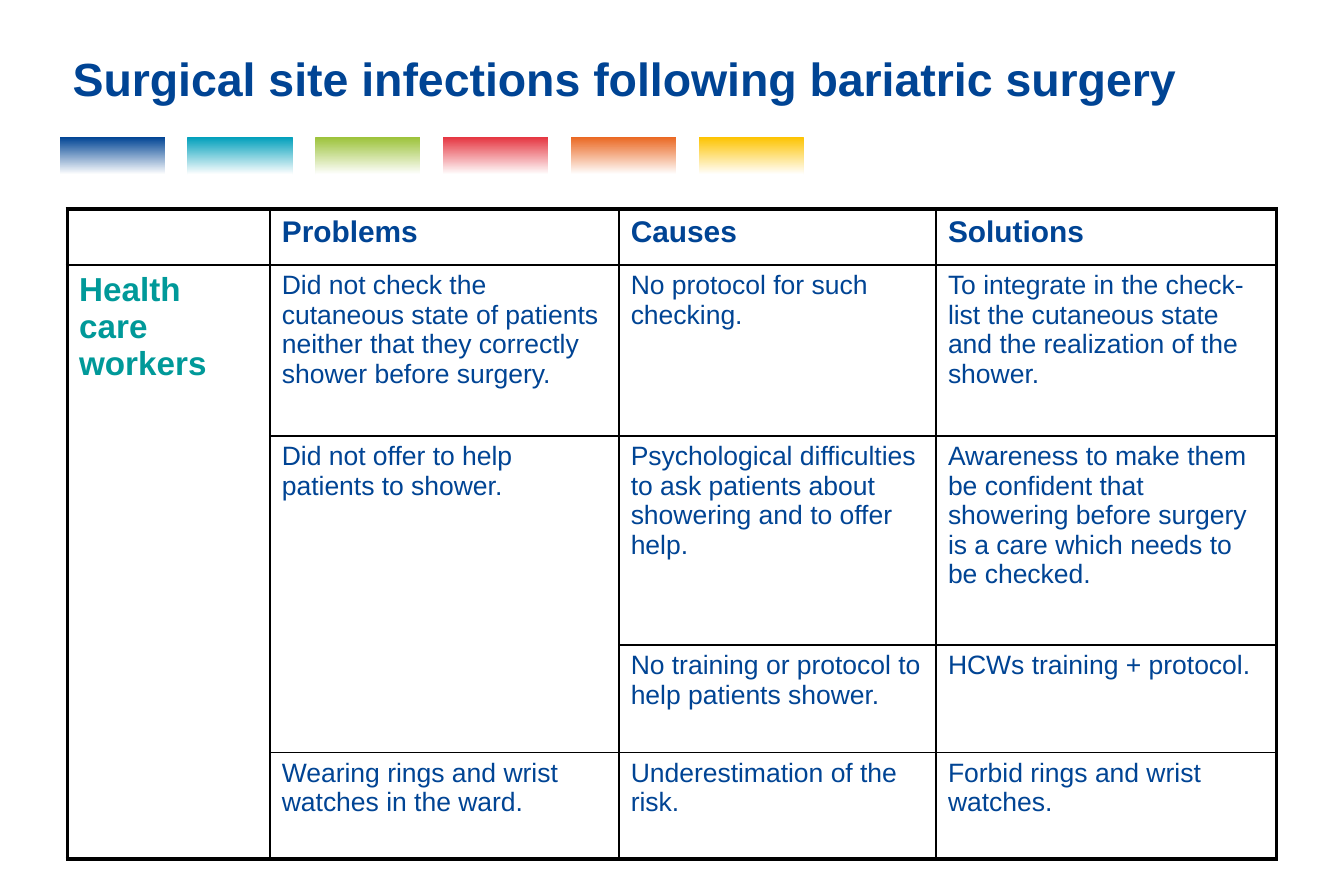
from dataclasses import dataclass

import pptx
import pptx.dml.color
import pptx.enum.shapes
import pptx.enum.text
import pptx.oxml
import pptx.oxml.ns
import pptx.slide
import pptx.table
import pptx.text.text
import pptx.util

RGBColor = pptx.dml.color.RGBColor
Pt = pptx.util.Pt

NAVY = RGBColor(0x00, 0x44, 0x94)
CYAN = RGBColor(0x00, 0x9F, 0xBB)
GREEN = RGBColor(0x9C, 0xC2, 0x39)
RED = RGBColor(0xE5, 0x35, 0x40)
ORANGE = RGBColor(0xEA, 0x67, 0x21)
YELLOW = RGBColor(0xFD, 0xC3, 0x00)
TEAL = RGBColor(0x00, 0x99, 0x99)
WHITE = RGBColor(0xFF, 0xFF, 0xFF)
BLACK = RGBColor(0x00, 0x00, 0x00)

FONT = "Arial"
OUTER_BORDER = 2.25
INNER_BORDER = 1
SWATCH_PITCH = 77
COLUMN_WIDTHS = [122.2, 210.3, 191.2, 205]
ROW_HEIGHTS = [33.8, 103, 126, 64.8, 64.1]


@dataclass(frozen=True)
class TextStyle:
    size: float
    color: RGBColor
    bold: bool


@dataclass(frozen=True)
class Entry:
    row: int
    column: int
    text: str
    style: TextStyle
    row_span: int = 1


TITLE = TextStyle(28, NAVY, True)
HEADING = TextStyle(18, NAVY, True)
GROUP = TextStyle(20, TEAL, True)
BODY = TextStyle(16, NAVY, False)

ENTRIES = [
    Entry(0, 1, "Problems", HEADING),
    Entry(0, 2, "Causes", HEADING),
    Entry(0, 3, "Solutions", HEADING),
    Entry(1, 0, "Health care workers", GROUP, 4),
    Entry(1, 1, "Did not check the cutaneous state of patients neither that "
                "they correctly shower before surgery.", BODY),
    Entry(1, 2, "No protocol for such checking.", BODY),
    Entry(1, 3, "To integrate in the check-list the cutaneous state and the "
                "realization of the shower.", BODY),
    Entry(2, 1, "Did not offer to help patients to shower.", BODY, 2),
    Entry(2, 2, "Psychological difficulties to ask patients about showering "
                "and to offer help.", BODY),
    Entry(2, 3, "Awareness to make them be confident that showering before "
                "surgery is a care which needs to be checked.", BODY),
    Entry(3, 2, "No training or protocol to help patients shower.", BODY),
    Entry(3, 3, "HCWs training + protocol.", BODY),
    Entry(4, 1, "Wearing rings and wrist watches in the ward.", BODY),
    Entry(4, 2, "Underestimation of the risk.", BODY),
    Entry(4, 3, "Forbid rings and wrist watches.", BODY),
]


def write(frame: pptx.text.text.TextFrame, text: str, style: TextStyle) -> None:
    frame.text = text
    font = frame.paragraphs[0].runs[0].font
    font.name = FONT
    font.size = Pt(style.size)
    font.bold = style.bold
    font.color.rgb = style.color


def add_swatch(slide: pptx.slide.Slide, position: int, color: RGBColor) -> None:
    swatch = slide.shapes.add_shape(
        pptx.enum.shapes.MSO_SHAPE.RECTANGLE,
        Pt(36 + position * SWATCH_PITCH), Pt(82.6), Pt(63.4), Pt(22.6))
    swatch.shadow.inherit = False
    swatch.line.fill.background()
    swatch.fill.gradient()
    swatch.fill.gradient_angle = 270
    for stop, shade in zip(swatch.fill.gradient_stops, (color, WHITE)):
        stop.color.rgb = shade
    for stop, offset in zip(swatch.fill.gradient_stops, (0, 1)):
        stop.position = offset


def add_title(slide: pptx.slide.Slide) -> None:
    title = slide.shapes.add_textbox(Pt(36.7), Pt(16.6), Pt(736.6), Pt(61.2))
    title.text_frame.word_wrap = True
    title.text_frame.vertical_anchor = pptx.enum.text.MSO_ANCHOR.MIDDLE
    write(title.text_frame, "Surgical site infections following bariatric surgery", TITLE)


def border_widths(cell: pptx.table._Cell, row: int, column: int) -> dict[str, float]:
    def width(is_outer: bool) -> float:
        return OUTER_BORDER if is_outer else INNER_BORDER

    last_row = len(ROW_HEIGHTS) - 1
    end_row = row + cell.span_height - 1 if cell.is_merge_origin else row
    inside_span = cell.is_spanned and row < last_row
    return {
        "lnL": width(column == 0),
        "lnR": width(column == len(COLUMN_WIDTHS) - 1),
        "lnT": 0 if cell.is_spanned else width(row == 0),
        "lnB": 0 if inside_span else width(end_row == last_row),
    }


def draw_borders(cell: pptx.table._Cell, widths: dict[str, float]) -> None:
    properties = cell._tc.get_or_add_tcPr()
    for index, (side, width) in enumerate(widths.items()):
        paint = (f'<a:solidFill><a:srgbClr val="{BLACK}"/></a:solidFill>'
                 if width else "<a:noFill/>")
        properties.insert(index, pptx.oxml.parse_xml(
            f'<a:{side} {pptx.oxml.ns.nsdecls("a")} w="{int(Pt(width))}">{paint}</a:{side}>'))


def add_findings(slide: pptx.slide.Slide) -> None:
    findings = slide.shapes.add_table(
        len(ROW_HEIGHTS), len(COLUMN_WIDTHS), Pt(40.5), Pt(126),
        Pt(sum(COLUMN_WIDTHS)), Pt(sum(ROW_HEIGHTS))).table
    findings.first_row = False
    findings.horz_banding = False
    for column, width in zip(findings.columns, COLUMN_WIDTHS):
        column.width = Pt(width)
    for row, height in zip(findings.rows, ROW_HEIGHTS):
        row.height = Pt(height)
    for entry in ENTRIES:
        cell = findings.cell(entry.row, entry.column)
        if entry.row_span > 1:
            cell.merge(findings.cell(entry.row + entry.row_span - 1, entry.column))
        write(cell.text_frame, entry.text, entry.style)
    for row in range(len(ROW_HEIGHTS)):
        for column in range(len(COLUMN_WIDTHS)):
            cell = findings.cell(row, column)
            cell.fill.background()
            draw_borders(cell, border_widths(cell, row, column))


def main() -> None:
    presentation = pptx.Presentation()
    presentation.slide_width = Pt(810)
    presentation.slide_height = Pt(540)
    slide = presentation.slides.add_slide(presentation.slide_layouts[6])
    for position, color in enumerate([NAVY, CYAN, GREEN, RED, ORANGE, YELLOW]):
        add_swatch(slide, position, color)
    add_title(slide)
    add_findings(slide)
    presentation.save("out.pptx")


if __name__ == "__main__":
    main()
